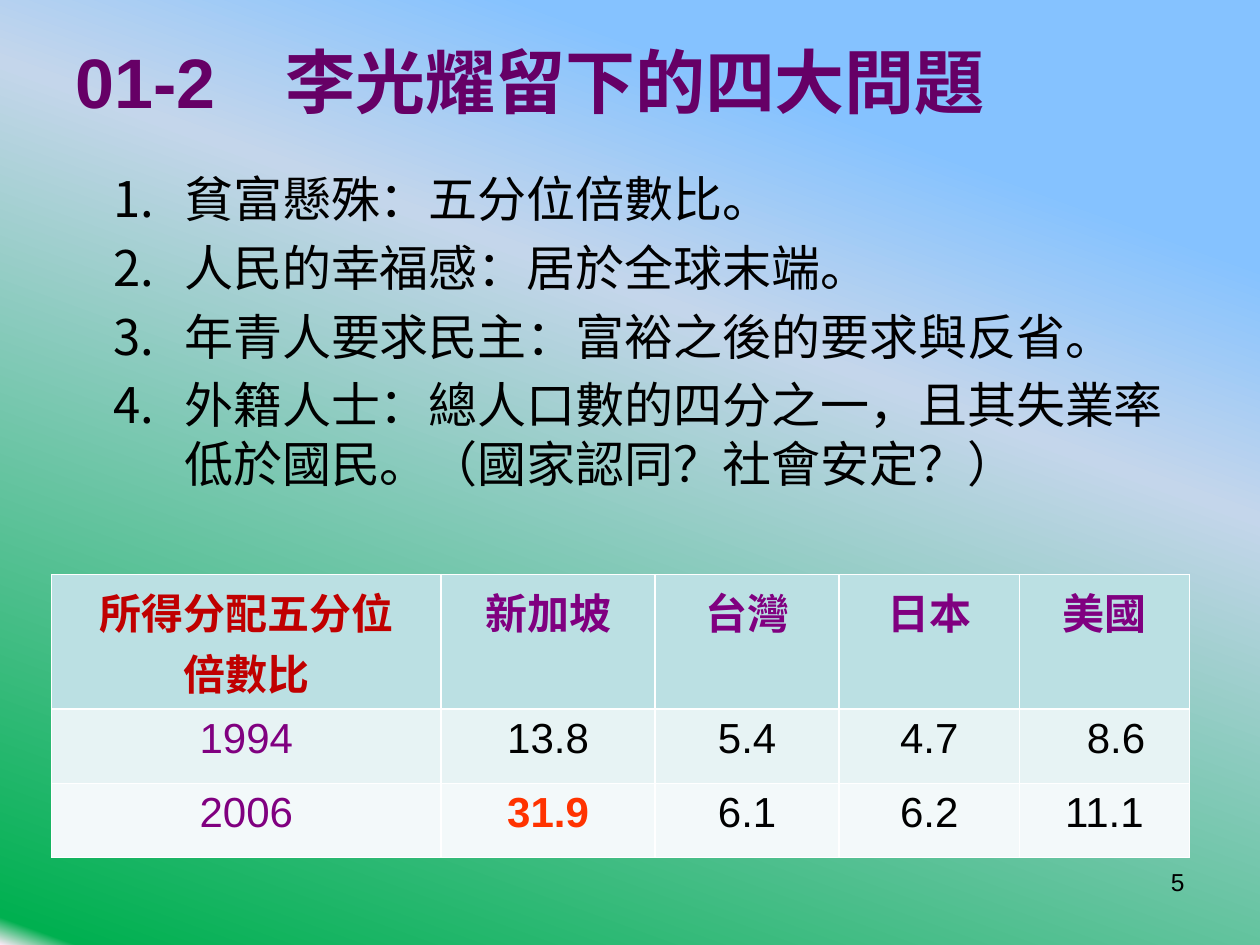
"""Build the slide on four problems and the income quintile ratio."""
from lxml.etree import SubElement, fromstring
from pptx import Presentation
from pptx.dml.color import RGBColor
from pptx.enum.text import MSO_ANCHOR, MSO_AUTO_SIZE, PP_ALIGN
from pptx.oxml.ns import nsdecls, qn
from pptx.util import Pt


def color(value):
    return RGBColor.from_string(value)


class SlideBuilder:
    font_name = "Arial"
    black, purple, plum = "000000", "800080", "660066"
    crimson, orange = "C00000", "FF3300"
    row_fills = ("BBE0E3", "E7F3F4", "F3F9FA")

    def __init__(self, deck):
        self.slide = deck.slides.add_slide(deck.slide_layouts[1])

    def place(self, shape, left, top, width, height):
        shape.left, shape.top = Pt(left), Pt(top)
        shape.width, shape.height = Pt(width), Pt(height)

    def style(self, paragraph, size, shade, bold=False, align=PP_ALIGN.LEFT):
        paragraph.alignment = align
        font = paragraph.font
        font.name, font.size, font.bold = self.font_name, Pt(size), bold
        font.color.rgb = color(shade)

    def background(self, stops, angle):
        stop_xml = "".join(
            f'<a:gs pos="{position * 1000}"><a:srgbClr val="{shade}"/></a:gs>'
            for position, shade in stops
        )
        gradient = fromstring(
            f'<a:gradFill {nsdecls("a")} rotWithShape="1"><a:gsLst>{stop_xml}</a:gsLst>'
            f'<a:lin ang="{angle * 60000}" scaled="0"/></a:gradFill>'
        )
        fill = self.slide.background.fill
        fill.solid()
        properties = self.slide.element.find(".//" + qn("p:bgPr"))
        properties.replace(properties.find(qn("a:solidFill")), gradient)

    def title(self, text, *bounds):
        shape = self.slide.shapes.title
        self.place(shape, *bounds)
        frame = shape.text_frame
        frame.text = text
        frame.auto_size = MSO_AUTO_SIZE.NONE
        frame.vertical_anchor = MSO_ANCHOR.MIDDLE
        self.style(frame.paragraphs[0], 40, self.plum, bold=True)

    def numbered_list(self, items, *bounds):
        shape = self.slide.placeholders[1]
        self.place(shape, *bounds)
        frame = shape.text_frame
        frame.text = "\n".join(items)
        frame.auto_size = MSO_AUTO_SIZE.NONE
        for paragraph in frame.paragraphs:
            self.style(paragraph, 28, self.black)
            properties = paragraph._p.get_or_add_pPr()
            properties.set("marL", str(Pt(40.5)))
            properties.set("indent", str(-Pt(40.5)))
            number = SubElement(properties, qn("a:buAutoNum"), type="arabicPeriod")
            properties.insert(0, number)

    def table(self, rows, left, top, widths, heights):
        frame = self.slide.shapes.add_table(
            len(rows), len(widths), Pt(left), Pt(top), Pt(sum(widths)), Pt(sum(heights))
        )
        table = frame.table
        for column, width in zip(table.columns, widths):
            column.width = Pt(width)
        for row, height, values, fill in zip(table.rows, heights, rows, self.row_fills):
            row.height = Pt(height)
            for cell, (text, shade, bold) in zip(row.cells, values):
                cell.fill.solid()
                cell.fill.fore_color.rgb = color(fill)
                cell.text_frame.text = text
                for paragraph in cell.text_frame.paragraphs:
                    self.style(paragraph, 24, shade, bold, PP_ALIGN.CENTER)
        return table

    def indent_cell(self, cell, amount):
        properties = cell.text_frame.paragraphs[0]._p.get_or_add_pPr()
        properties.set("marL", str(Pt(amount)))

    def page_number(self, text, *bounds):
        box = self.slide.shapes.add_textbox(*map(Pt, bounds))
        box.text_frame.word_wrap = True
        box.text_frame.text = text
        self.style(box.text_frame.paragraphs[0], 14, self.black, align=PP_ALIGN.RIGHT)


def main():
    deck = Presentation()
    deck.slide_width, deck.slide_height = Pt(720), Pt(540)
    page = SlideBuilder(deck)
    page.background(
        [(19, "85C2FF"), (37, "C4D6EB"), (98, "00B050"), (100, "FFEBFA")], 110
    )
    page.numbered_list(
        [
            "貧富懸殊：五分位倍數比。",
            "人民的幸福感：居於全球末端。",
            "年青人要求民主：富裕之後的要求與反省。",
            "外籍人士：總人口數的四分之一，且其失業率低於國民。（國家認同？社會安定？）",
        ],
        57.6, 92.9, 640.8, 208.8,
    )
    page.title("01-2　李光耀留下的四大問題", 36, 9.4, 594, 73.4)

    countries = ("新加坡", "台灣", "日本", "美國")
    ratios = {"1994": ("13.8", "5.4", "4.7", "8.6"), "2006": ("31.9", "6.1", "6.2", "11.1")}
    highlight = "31.9"
    rows = [
        [("所得分配五分位\n倍數比", page.crimson, True)]
        + [(country, page.purple, True) for country in countries]
    ]
    for year, values in ratios.items():
        rows.append(
            [(year, page.purple, False)]
            + [
                (value, page.orange if value == highlight else page.black, value == highlight)
                for value in values
            ]
        )
    table = page.table(
        rows, 29.5, 328.3, (222.5, 122.4, 105.1, 103, 97.2), (52.6, 42.5, 42.5)
    )
    page.indent_cell(table.cell(1, 4), 13.3)
    page.page_number("5", 516.2, 491.8, 167.8, 37.4)
    deck.save("out.pptx")


if __name__ == "__main__":
    main()
